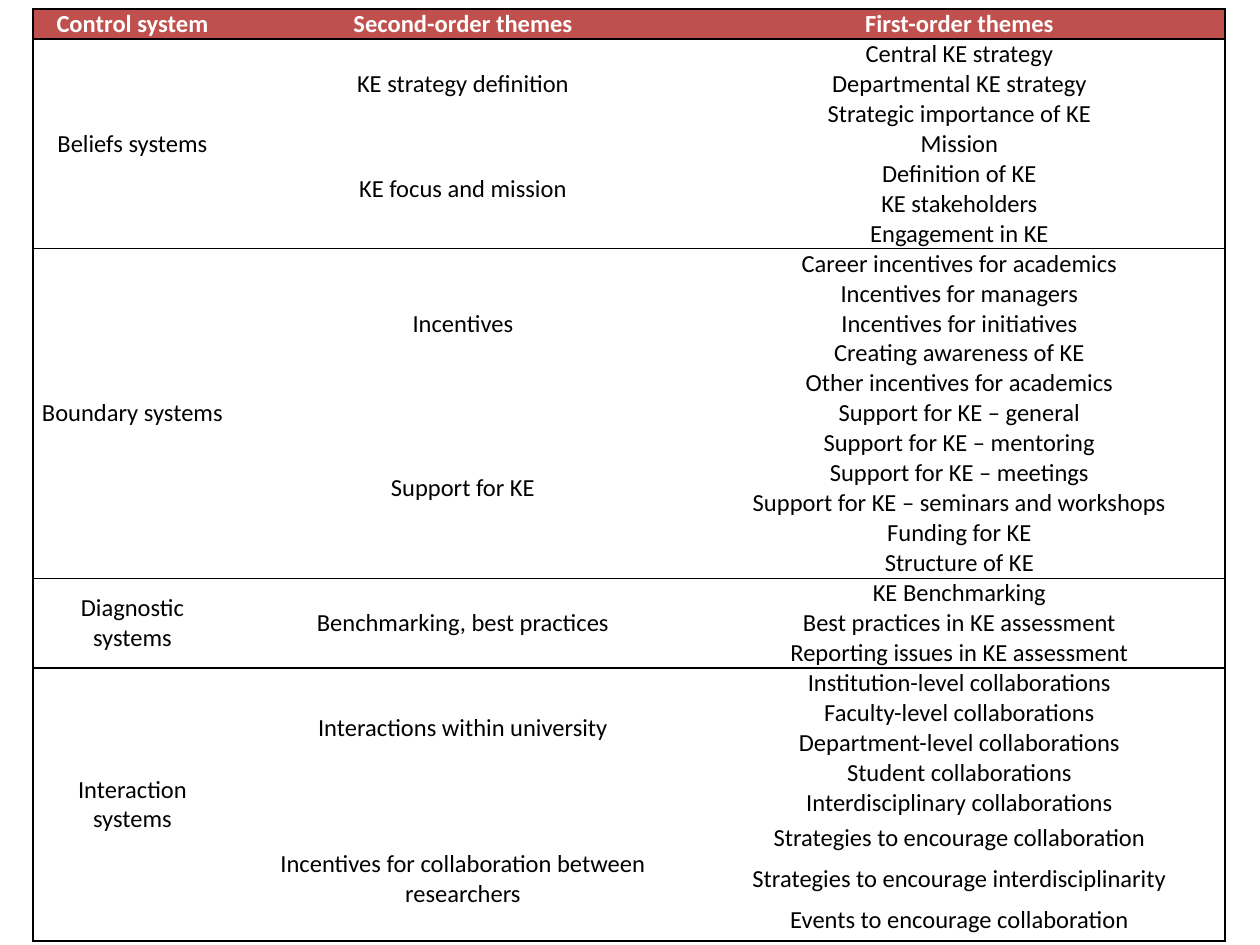
from lxml import etree
from pptx import Presentation
from pptx.dml.color import RGBColor
from pptx.enum.text import MSO_ANCHOR, PP_ALIGN
from pptx.oxml.ns import qn
from pptx.util import Pt

MIDDLE = MSO_ANCHOR.MIDDLE
CENTER = PP_ALIGN.CENTER

HEADINGS = ["Control system", "Second-order themes", "First-order themes"]
SYSTEMS = [
    ("Beliefs systems", [
        ("KE strategy definition", [
            "Central KE strategy", "Departmental KE strategy",
            "Strategic importance of KE"]),
        ("KE focus and mission", [
            "Mission", "Definition of KE", "KE stakeholders",
            "Engagement in KE"]),
    ]),
    ("Boundary systems", [
        ("Incentives", [
            "Career incentives for academics", "Incentives for managers",
            "Incentives for initiatives", "Creating awareness of KE",
            "Other incentives for academics"]),
        ("Support for KE", [
            "Support for KE – general", "Support for KE – mentoring",
            "Support for KE – meetings",
            "Support for KE – seminars and workshops",
            "Funding for KE", "Structure of KE"]),
    ]),
    ("Diagnostic systems", [
        ("Benchmarking, best practices", [
            "KE Benchmarking", "Best practices in KE assessment",
            "Reporting issues in KE assessment"]),
    ]),
    ("Interaction systems", [
        ("Interactions within university", [
            "Institution-level collaborations", "Faculty-level collaborations",
            "Department-level collaborations", "Student collaborations",
            "Interdisciplinary collaborations"]),
        ("Incentives for collaboration between researchers", [
            "Strategies to encourage collaboration",
            "Strategies to encourage interdisciplinarity",
            "Events to encourage collaboration"]),
    ]),
]
RAISED_THEME = "Interactions within university"

LEFT, TOP = 33, 9
COLUMN_WIDTHS = [199, 462, 531]
ROW_HEIGHT, TALL_ROW_HEIGHT, TALL_ROWS = 30, 41, 3
INSET = 9
BLACK, WHITE, RED = "000000", "FFFFFF", "C0504D"


def px(length):
    return round(length * 914400 / 126)


def color(value):
    return RGBColor.from_string(value)


def write(cell, text, font_color=BLACK, bold=False, bottom=0):
    cell.vertical_anchor = MIDDLE
    cell.margin_left = cell.margin_right = px(INSET)
    cell.margin_top, cell.margin_bottom = 0, px(bottom)
    paragraph = cell.text_frame.paragraphs[0]
    paragraph.alignment = CENTER
    run = paragraph.add_run()
    run.text = text
    run.font.name, run.font.size, run.font.bold = "Calibri", Pt(14), bold
    run.font.color.rgb = color(font_color)


def set_borders(cell, **edges):
    properties = cell._tc.get_or_add_tcPr()
    for side in "LRTB":
        line = etree.SubElement(properties, qn(f"a:ln{side}"), w=str(Pt(1)))
        if edges[side]:
            fill = etree.SubElement(line, qn("a:solidFill"))
            etree.SubElement(fill, qn("a:srgbClr"), val=BLACK)
        else:
            etree.SubElement(line, qn("a:noFill"))


def add_block(table, column, first, count, text, group, fill=None, **text_format):
    last = first + count - 1
    for row in range(first, last + 1):
        cell = table.cell(row, column)
        set_borders(cell, L=column == 0, R=column == len(HEADINGS) - 1,
                    T=row == first == group[0],
                    B=row in (first, last) and last == group[1])
        if fill:
            cell.fill.solid()
            cell.fill.fore_color.rgb = color(fill)
        else:
            cell.fill.background()
    origin = table.cell(first, column)
    if count > 1:
        origin.merge(table.cell(last, column))
    write(origin, text, **text_format)


def main():
    presentation = Presentation()
    presentation.slide_width, presentation.slide_height = px(1260), px(945)
    slide = presentation.slides.add_slide(presentation.slide_layouts[6])

    sizes = [sum(len(items) for _, items in themes) for _, themes in SYSTEMS]
    row_count = 1 + sum(sizes)
    heights = ([ROW_HEIGHT] * (row_count - TALL_ROWS)
               + [TALL_ROW_HEIGHT] * TALL_ROWS)
    table = slide.shapes.add_table(
        row_count, len(HEADINGS), px(LEFT), px(TOP),
        px(sum(COLUMN_WIDTHS)), px(sum(heights))).table
    table.horz_banding = False
    for column, width in zip(table.columns, COLUMN_WIDTHS):
        column.width = px(width)
    for row, height in zip(table.rows, heights):
        row.height = px(height)

    for column, heading in enumerate(HEADINGS):
        add_block(table, column, 0, 1, heading, (0, 0), fill=RED,
                  font_color=WHITE, bold=True)
    row = 1
    for (system, themes), size in zip(SYSTEMS, sizes):
        group = (row, row + size - 1)
        add_block(table, 0, row, size, system, group)
        for theme, items in themes:
            bottom = ROW_HEIGHT if theme == RAISED_THEME else 0
            add_block(table, 1, row, len(items), theme, group, bottom=bottom)
            for item in items:
                add_block(table, 2, row, 1, item, group)
                row += 1

    presentation.save("out.pptx")


if __name__ == "__main__":
    main()
